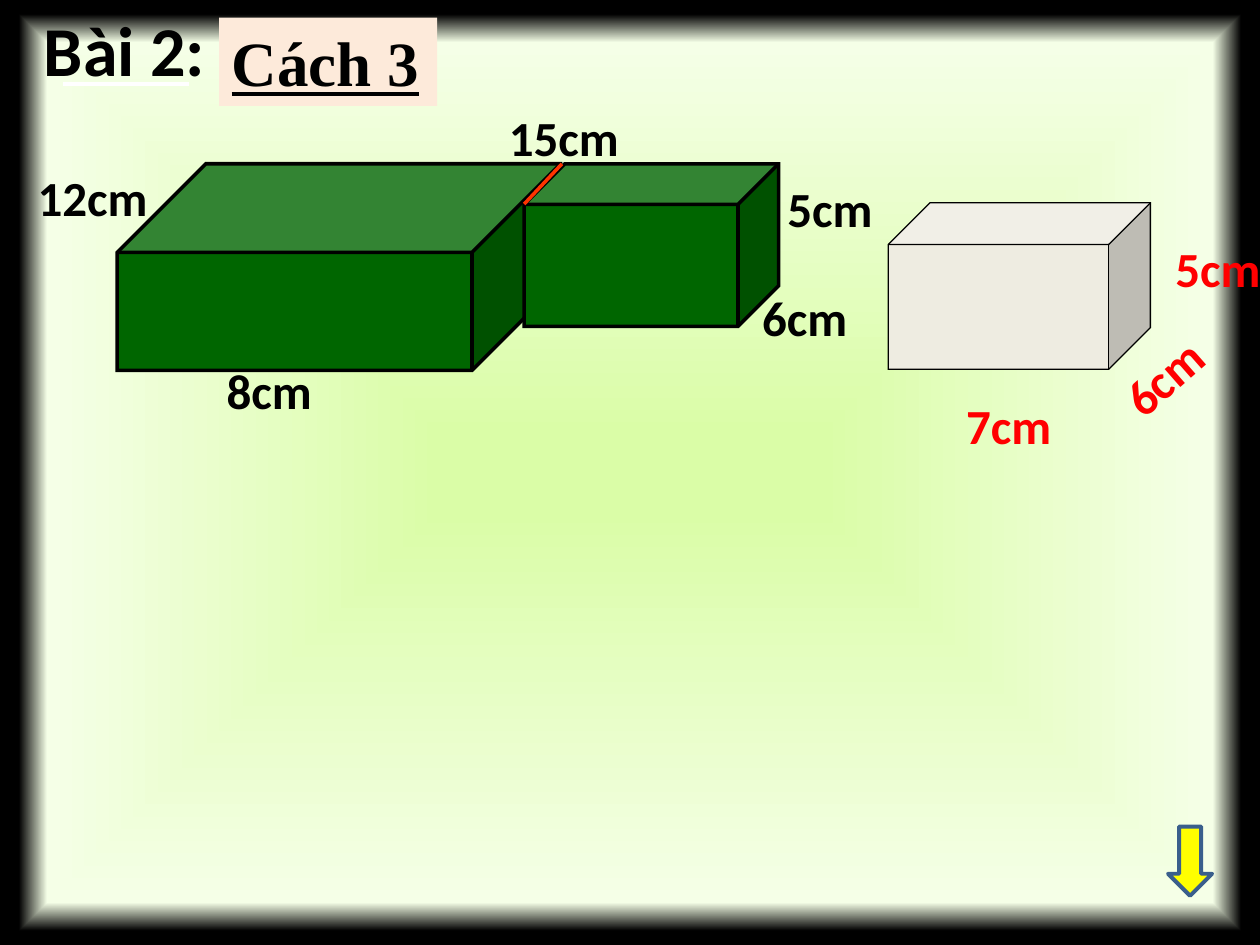
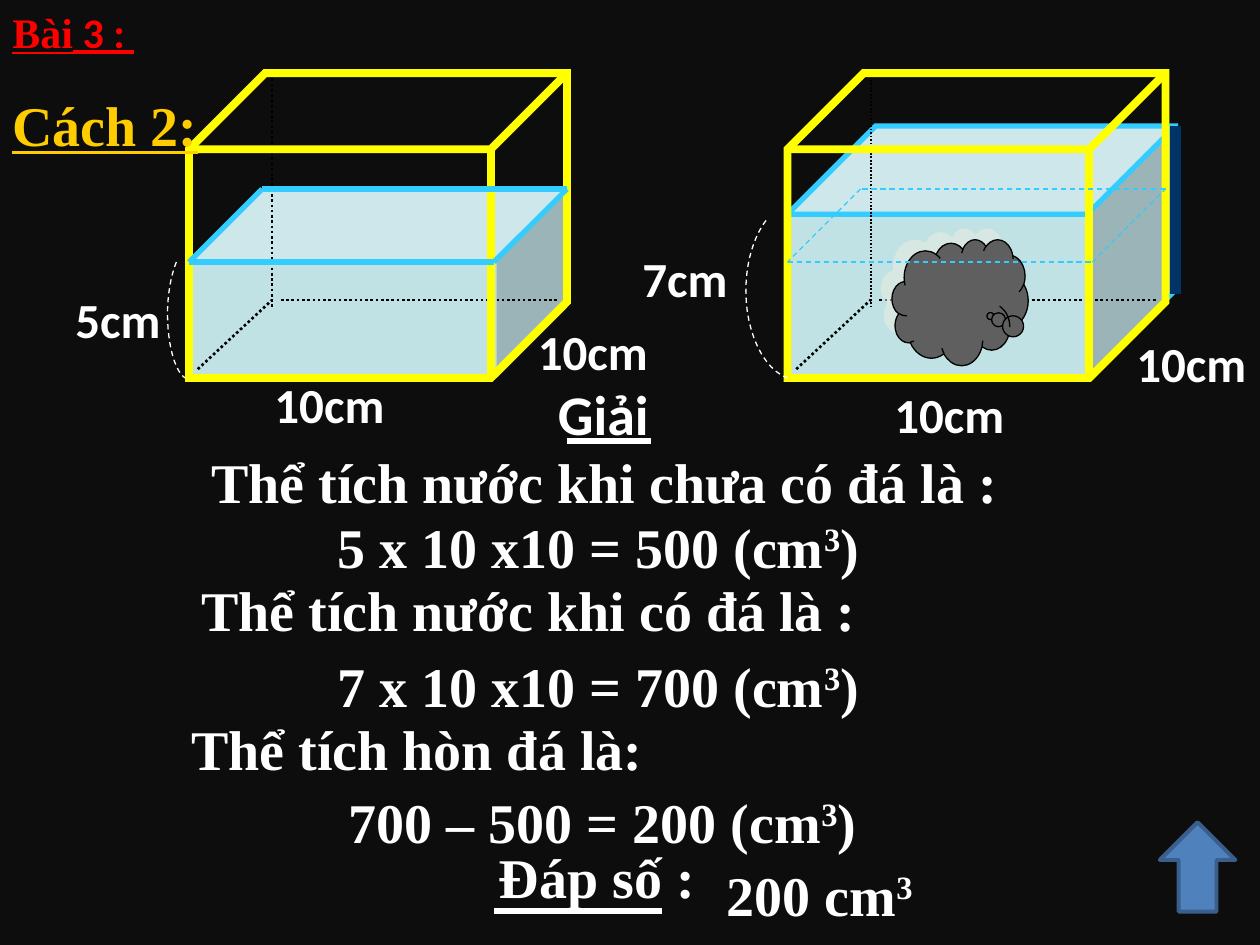
from dataclasses import dataclass
from typing import Optional

from pptx import Presentation
from pptx.dml.color import RGBColor
from pptx.enum.dml import MSO_LINE
from pptx.enum.shapes import MSO_CONNECTOR, MSO_SHAPE
from pptx.enum.text import MSO_AUTO_SIZE
from pptx.oxml import parse_xml
from pptx.oxml.ns import nsdecls, qn
from pptx.util import Inches, Pt

CUBE = MSO_SHAPE.CUBE
ARROW = MSO_SHAPE.RIGHT_ARROW
CLOUD = MSO_SHAPE.CLOUD_CALLOUT
STRAIGHT = MSO_CONNECTOR.STRAIGHT
DOT = MSO_LINE.ROUND_DOT
DASH = MSO_LINE.DASH
GROW = MSO_AUTO_SIZE.SHAPE_TO_FIT_TEXT

COLS, ROWS = 100, 75
CELL = Inches(10) // COLS
SHIFT = 47.5  # columns from the left tank to the right one


@dataclass(frozen=True)
class Theme:
    sans: str = "Calibri"
    serif: str = "Times New Roman"
    small: int = 24
    label: int = 28
    body: int = 32
    head: int = 36
    title: int = 40
    black: str = "000000"
    white: str = "FFFFFF"
    red: str = "FF0000"
    gold: str = "FFCC00"
    peach: str = "FDEADA"
    yellow: str = "FFFF00"
    green: str = "006600"
    cut: str = "FF3300"
    cream: str = "EEECE1"
    water: str = "C1E2E5"
    cyan: str = "33CCFF"
    navy: str = "003366"
    stone: str = "5F5F5F"
    blue: str = "4F81BD"
    edge: str = "3A5F8C"
    night: str = "0D0D0D"
    lime: str = "DAFDA7"
    pale: str = "F5FFE7"


T = Theme()


@dataclass(frozen=True)
class Label:
    """Text in a box; parts between carets are raised."""
    text: str
    x: float
    y: float
    w: float
    color: str = T.black
    size: int = T.label
    font: str = T.sans
    under: bool = False
    turn: float = 0
    fill: Optional[str] = None


@dataclass(frozen=True)
class Solid:
    kind: int
    x: float
    y: float
    w: float
    h: float
    fill: Optional[str] = None
    line: Optional[str] = None
    width: float = 1
    adjust: tuple = ()
    turn: float = 0


@dataclass(frozen=True)
class Stroke:
    x1: float
    y1: float
    x2: float
    y2: float
    color: str
    width: float
    dash: Optional[int] = None


def cell(n: float) -> int:
    return round(n * CELL)


def rgb(code: str) -> RGBColor:
    return RGBColor.from_string(code)


def paint(fill, color: Optional[str]) -> None:
    if color:
        fill.solid()
        fill.fore_color.rgb = rgb(color)
    else:
        fill.background()


def pen(line, color: str, width: float, dash: Optional[int] = None) -> None:
    paint(line.fill, color)
    line.width = Pt(width)
    if dash:
        line.dash_style = dash


def add_run(para, text: str, font: str, size: int, color: str,
            under: bool = False, raised: bool = False) -> None:
    run = para.add_run()
    run.text = text
    face = run.font
    face.name, face.size, face.bold = font, Pt(size), True
    face.color.rgb = rgb(color)
    if under:
        face.underline = True
    if raised:
        run._r.get_or_add_rPr().set("baseline", "30000")


def add_box(slide, x: float, y: float, w: float, h: float):
    box = slide.shapes.add_textbox(cell(x), cell(y), cell(w), cell(h))
    box.text_frame.word_wrap = True
    box.text_frame.auto_size = GROW
    return box


def add_label(slide, item: Label) -> None:
    box = add_box(slide, item.x, item.y, item.w, item.size / 6 + 1)
    box.rotation = item.turn
    if item.fill:
        paint(box.fill, item.fill)
    para = box.text_frame.paragraphs[0]
    for i, part in enumerate(item.text.split("^")):
        if part:
            add_run(para, part, item.font, item.size, item.color,
                    item.under, i % 2 == 1)


def add_solid(slide, item: Solid):
    shape = slide.shapes.add_shape(
        item.kind, cell(item.x), cell(item.y), cell(item.w), cell(item.h))
    shape.shadow.inherit = False
    shape.rotation = item.turn
    for i, value in enumerate(item.adjust):
        shape.adjustments[i] = value
    paint(shape.fill, item.fill)
    if item.line:
        pen(shape.line, item.line, item.width)
        if item.kind == CUBE:
            shape.element.spPr.find(qn("a:ln")).append(
                parse_xml(f'<a:miter {nsdecls("a")} lim="800000"/>'))
    else:
        shape.line.fill.background()
    return shape


def add_stroke(slide, item: Stroke) -> None:
    link = slide.shapes.add_connector(
        STRAIGHT, cell(item.x1), cell(item.y1), cell(item.x2), cell(item.y2))
    pen(link.line, item.color, item.width, item.dash)
    link.element.spPr.append(parse_xml(f'<a:effectLst {nsdecls("a")}/>'))


def add_all(slide, items: list) -> None:
    tools = {Label: add_label, Solid: add_solid, Stroke: add_stroke}
    for item in items:
        tools[type(item)](slide, item)


def add_glow(slide) -> None:
    """Fill the ground with light that fades from the middle to black."""
    slide.background.fill.gradient()
    old = next(slide.element.iter(qn("a:gradFill")))
    stops = ((8, T.lime, 100), (91, T.pale, 100), (97, T.black, 0))
    marks = "".join(
        f'<a:gs pos="{at}000"><a:srgbClr val="{color}">'
        f'<a:alpha val="{alpha}000"/></a:srgbClr></a:gs>'
        for at, color, alpha in stops)
    old.getparent().replace(old, parse_xml(
        f'<a:gradFill {nsdecls("a")}><a:gsLst>{marks}</a:gsLst>'
        '<a:path path="shape"><a:fillToRect l="50000" t="50000" '
        'r="50000" b="50000"/></a:path></a:gradFill>'))


def add_tank(slide, x: float, width: float) -> None:
    """Dotted hidden edges, then the yellow frame."""
    add_all(slide, [
        Stroke(x + 6.6, 5.8, x + 6.6, 24.5, T.black, width, DOT),
        Stroke(x + 0.7, 29.3, x + 6.6, 23.8, T.black, 1.5, DOT),
        Stroke(x + 7.3, 23.8, x + 29.3, 23.8, T.black, 1.5, DOT),
        Solid(CUBE, x, 5.8, 30, 24.2, line=T.yellow, width=4.5,
              adjust=(0.25,))])


def add_level(slide, x: float, width: float,
              dash: Optional[int] = None) -> None:
    """Outline of the water's surface."""
    ring = [(x, 20.8), (x + 24.2, 20.8), (x + 30, 15), (x + 5.8, 15)]
    for start, end in zip(ring, ring[1:] + ring[:1]):
        add_stroke(slide, Stroke(*start, *end, T.cyan, width, dash))


def add_arc(slide, start: tuple, curves: list, steps: int = 12) -> None:
    """Dashed open line through cubic curves, each two handles and an end."""
    dots, last = [], start
    for one, two, end in curves:
        for i in range(1, steps + 1):
            t = i / steps
            s = 1 - t
            dots.append(tuple(
                cell(s**3 * a + 3 * s * s * t * b + 3 * s * t * t * c + t**3 * d)
                for a, b, c, d in zip(last, one, two, end)))
        last = end
    pencil = slide.shapes.build_freeform(cell(start[0]), cell(start[1]))
    pencil.add_line_segments(dots, close=False)
    arc = pencil.convert_to_shape()
    arc.shadow.inherit = False
    paint(arc.fill, None)
    pen(arc.line, T.white, 0.75, DASH)


def add_stone(slide) -> None:
    rock = add_solid(slide, Solid(CLOUD, 70.8, 19, 10.8, 10, T.stone, T.black,
                                  0.75, (0.223, 0.109)))
    rock.element.spPr.find(qn("a:effectLst")).append(parse_xml(
        f'<a:outerShdw {nsdecls("a")} dist="{Pt(8.5)}" dir="13500000">'
        f'<a:srgbClr val="{T.cream}"><a:alpha val="50000"/></a:srgbClr>'
        '</a:outerShdw>'))


def make_blocks(slide) -> None:
    add_glow(slide)
    add_all(slide, [
        Solid(CUBE, 9.3, 13, 35.2, 16.4, T.green, T.black, 2, (0.429,)),
        Solid(CUBE, 41.6, 13, 20.2, 12.9, T.green, T.black, 2, (0.25,)),
        Stroke(41.6, 16.2, 44.6, 13, T.cut, 2),
        Label("12cm", 2, 12.8, 15),
        Label("15cm", 39.4, 8, 16.1),
        Label("5cm", 61.5, 13.7, 9.8),
        Label("6cm", 59.5, 22.3, 9.1),
        Solid(CUBE, 70.5, 16.1, 20.8, 13.2, T.cream, T.black, 0.75, (0.25,)),
        Label("7cm", 75.7, 30.9, 9.7, T.red),
        Label("5cm", 92.3, 18.4, 9.7, T.red),
        Label("6cm", 87.4, 25.6, 13.2, T.red, turn=318.7),
        Label("Bài 2:", 2.5, 0, 21.7, size=T.title),
        Stroke(5, 6.7, 15, 6.7, T.white, 2.25),
        Solid(ARROW, 91.7, 66.6, 5.5, 3.5, T.yellow, T.edge, 2.25, turn=90),
        Label("Cách 3", 17.4, 1.4, 17.3, size=T.head, font=T.serif,
              under=True, fill=T.peach),
        Label("8cm", 17, 28.1, 9.2)])


def add_heads(slide) -> None:
    frame = add_box(slide, 0, 0, 20.8, 13.1).text_frame
    first = frame.paragraphs[0]
    add_run(first, "Bài", T.serif, T.small, T.red, True)
    add_run(first, " 3 : ", T.sans, T.small, T.red, True)
    second = frame.add_paragraph()
    second.space_before = Pt(0.6 * T.body)
    add_run(second, "Cách 2:", T.serif, T.body, T.gold, True)


def make_tanks(slide) -> None:
    paint(slide.background.fill, T.night)
    left, right = 15, 15 + SHIFT
    add_all(slide, [
        Solid(CUBE, right, 10, 30.8, 20, T.water, T.cyan, 3, (0.35,)),
        Stroke(93.3, 10, 93.3, 23.3, T.navy, 6),
        Solid(CUBE, left, 15, 30, 15, T.water, adjust=(0.372,))])
    add_tank(slide, left, 1.5)
    add_tank(slide, right, 1)
    add_stone(slide)
    add_level(slide, right, 0.75, DASH)
    add_level(slide, left, 3)
    add_arc(slide, (14, 20.8), [
        ((13.6, 21.8), (13.3, 23.3), (13.3, 24.9)),
        ((13.3, 27.4), (13.9, 29.5), (14.7, 30))])
    add_arc(slide, (60.8, 17.5), [
        ((59.8, 18.8), (59.2, 20.9), (59.2, 23.1)),
        ((59.2, 26.4), (60.6, 29.3), (62.5, 30))])
    sizes = [("5cm", 5, 22.5, 9.2), ("7cm", 50, 19.2, 9.2),
             ("10cm", 20.8, 29.2, 12.5), ("10cm", 70, 30, 12.5),
             ("10cm", 41.7, 25, 12.5), ("10cm", 89.2, 26, 12.5)]
    add_all(slide, [Label(*spot, T.white) for spot in sizes])
    add_heads(slide)
    add_label(slide, Label("Giải", 43.3, 29.6, 12.5, T.white, T.body))
    proof = [("Thể tích nước khi chưa có đá là :", 15.8, 35, 70),
             ("5 x 10 x10 = 500 (cm^3^)", 25.8, 40.2, 60.8),
             ("Thể tích nước khi có đá là :", 15, 45.2, 58.3),
             ("7 x 10 x10 = 700 (cm^3^)", 25.8, 51.2, 55.8),
             ("Thể tích hòn đá là:", 14.2, 56.2, 53.3),
             ("700 – 500 = 200 (cm^3^)", 26.7, 62, 48.3),
             ("Đáp số :", 38.6, 66.4, 18.3),
             ("200 cm^3^", 56.7, 67.8, 21.7)]
    add_all(slide, [Label(*row, T.white, T.body, T.serif) for row in proof])
    add_all(slide, [
        Stroke(45, 35, 51.7, 35, T.white, 3),
        Stroke(39.2, 72.3, 52.5, 72.3, T.white, 3),
        Solid(ARROW, 91.5, 65.8, 7.1, 6, T.blue, T.edge, 2.25, turn=270)])


def main() -> None:
    deck = Presentation()
    deck.slide_width, deck.slide_height = COLS * CELL, ROWS * CELL
    for make in (make_blocks, make_tanks):
        make(deck.slides.add_slide(deck.slide_layouts[6]))
    deck.save("out.pptx")


if __name__ == "__main__":
    main()
